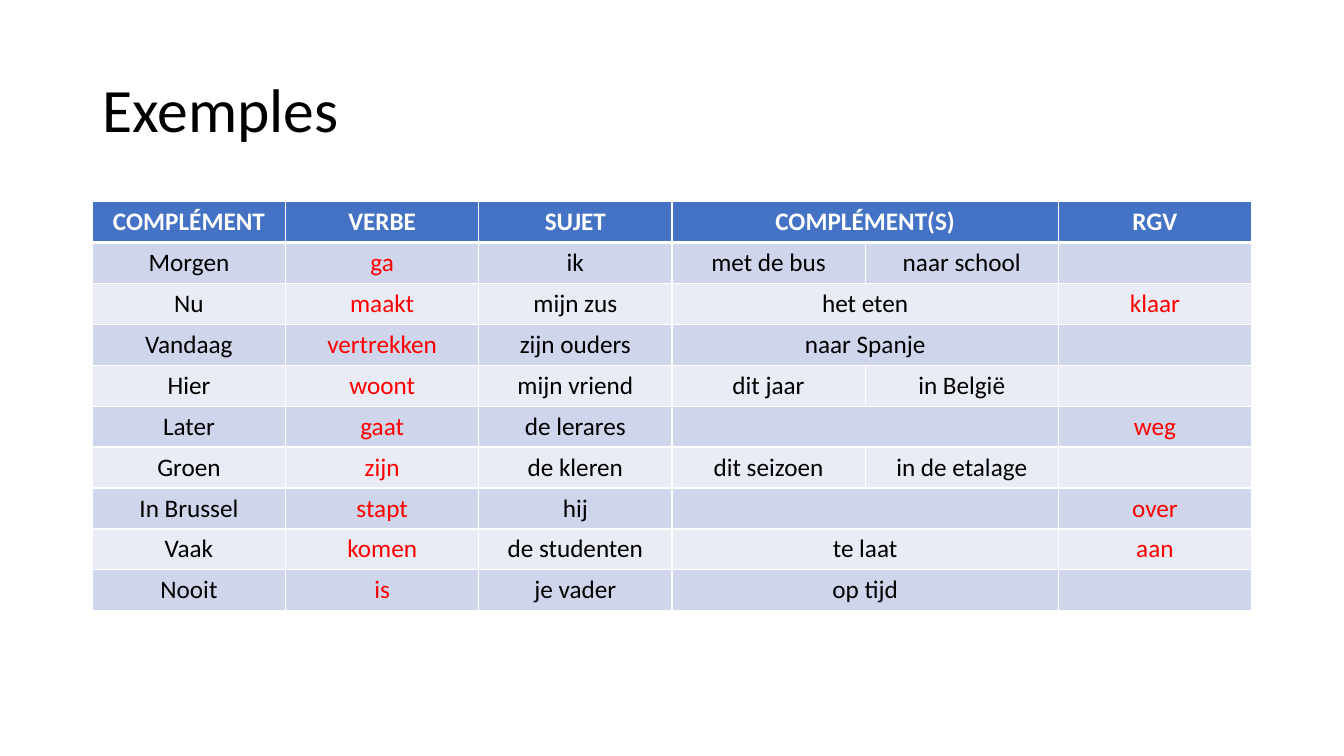
import pptx
import pptx.util
import pptx.dml.color
import pptx.enum.text
import pptx.oxml
import pptx.oxml.ns

PX = 9525  # EMU per px, 96 px to the inch
COLORS = {
    "black": "000000", "white": "FFFFFF", "red": "FF0000",
    "header": "4472C4", "odd": "CFD5EA", "even": "E9EBF5",
}
RED_COLUMNS = (1, 5)  # verb and its separable part

# None continues the cell on its left
SENTENCES = [
    ["COMPLÉMENT", "VERBE", "SUJET", "COMPLÉMENT(S)", None, "RGV"],
    ["Morgen", "ga", "ik", "met de bus", "naar school", ""],
    ["Nu", "maakt", "mijn zus", "het eten", None, "klaar"],
    ["Vandaag", "vertrekken", "zijn ouders", "naar Spanje", None, ""],
    ["Hier", "woont", "mijn vriend", "dit jaar", "in België", ""],
    ["Later", "gaat", "de lerares", "", None, "weg"],
    ["Groen", "zijn", "de kleren", "dit seizoen", "in de etalage", ""],
    ["In Brussel", "stapt", "hij", "", None, "over"],
    ["Vaak", "komen", "de studenten", "te laat", None, "aan"],
    ["Nooit", "is", "je vader", "op tijd", None, ""],
]


def rgb(name):
    return pptx.dml.color.RGBColor.from_string(COLORS[name])


class SlideBuilder:
    font = "Calibri"

    def __init__(self, slide):
        self.slide = slide

    def style(self, paragraph, size, color, bold=False):
        for run in paragraph.runs:
            run.font.name = self.font
            run.font.size = pptx.util.Pt(size)
            run.font.bold = bold
            run.font.color.rgb = rgb(color)

    def title(self, text, *box):
        frame = self.slide.shapes.add_textbox(*(v * PX for v in box)).text_frame
        frame.word_wrap = True
        frame.vertical_anchor = pptx.enum.text.MSO_ANCHOR.MIDDLE
        frame.text = text
        frame.paragraphs[0].line_spacing = 0.9
        self.style(frame.paragraphs[0], 44, "black")

    def borders(self, cell, bottom):
        properties = cell._tc.get_or_add_tcPr()
        widths = {"lnL": 1, "lnR": 1, "lnT": 1, "lnB": bottom}
        for position, (side, points) in enumerate(widths.items()):
            line = pptx.oxml.parse_xml(
                f'<a:{side} {pptx.oxml.ns.nsdecls("a")} w="{pptx.util.Pt(points)}">'
                f'<a:solidFill><a:srgbClr val="{COLORS["white"]}"/></a:solidFill>'
                f'</a:{side}>')
            properties.insert(position, line)

    def cell(self, cell, text, fill, color, header):
        cell.fill.solid()
        cell.fill.fore_color.rgb = rgb(fill)
        self.borders(cell, 3 if header else 1)
        if text:
            cell.text_frame.text = text
        paragraph = cell.text_frame.paragraphs[0]
        paragraph.alignment = pptx.enum.text.PP_ALIGN.CENTER
        self.style(paragraph, 18, color, header)

    def table(self, rows, left, top, column_width, row_height):
        columns = len(rows[0])
        table = self.slide.shapes.add_table(
            len(rows), columns, left * PX, top * PX,
            columns * column_width * PX, len(rows) * row_height * PX).table
        for r, texts in enumerate(rows):
            header = r == 0
            fill = "header" if header else "odd" if r % 2 else "even"
            for c, text in enumerate(texts):
                color = "white" if header else "red" if c in RED_COLUMNS else "black"
                self.cell(table.cell(r, c), text, fill, color, header)
                if text is None:
                    table.cell(r, c - 1).merge(table.cell(r, c))


def main():
    deck = pptx.Presentation()
    deck.slide_width, deck.slide_height = 1280 * PX, 720 * PX
    builder = SlideBuilder(deck.slides.add_slide(deck.slide_layouts[6]))

    # Heading
    builder.title("Exemples", 88, 38, 1104, 139)

    # Example sentences, split by word order
    builder.table(SENTENCES, left=88, top=192, column_width=184, row_height=39)

    deck.save("out.pptx")


if __name__ == "__main__":
    main()
